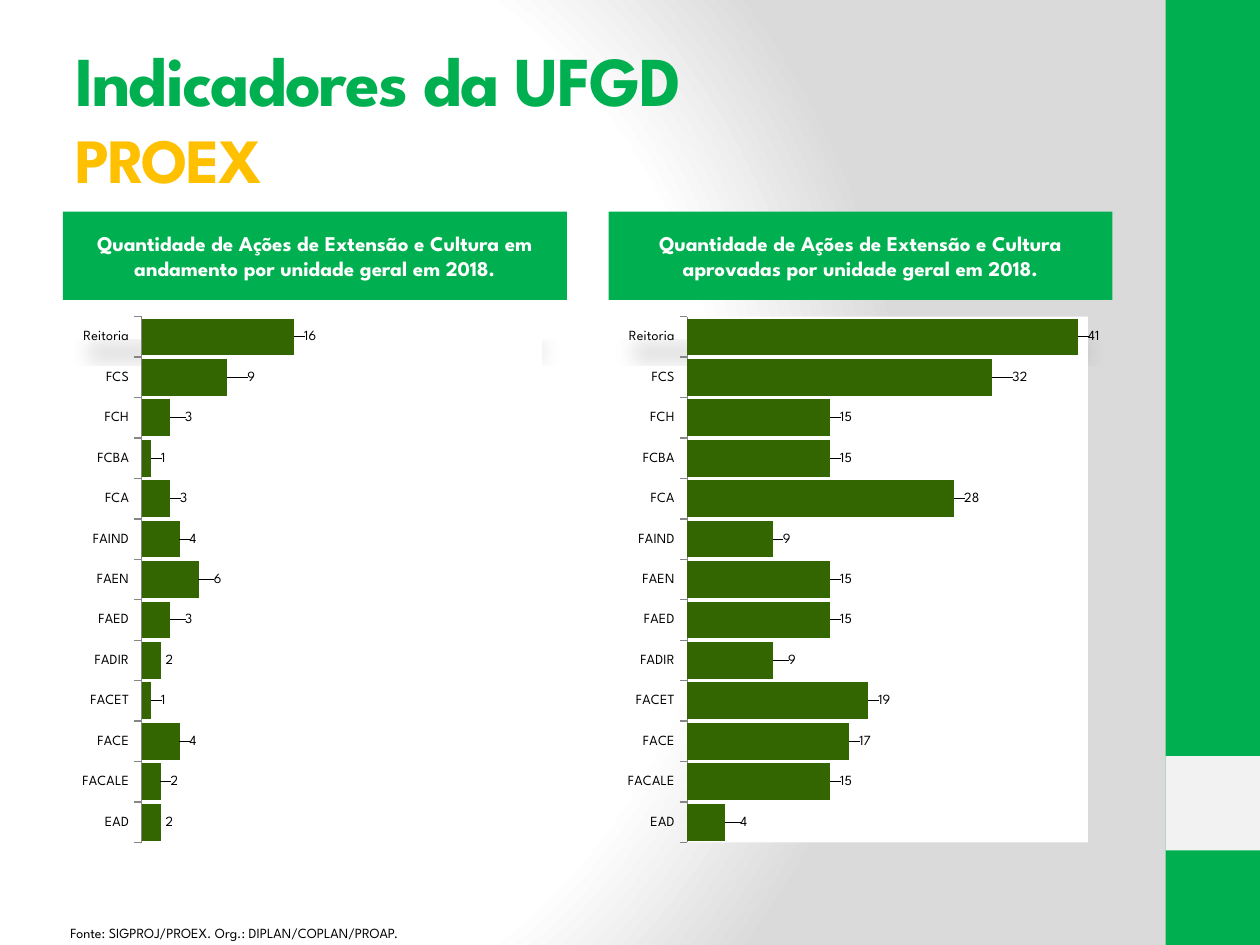
import pptx
import pptx.chart.data
import pptx.dml.color
import pptx.enum.chart
import pptx.enum.shapes
import pptx.enum.text
import pptx.oxml
import pptx.oxml.ns
import pptx.util
from pptx.util import Inches, Pt

RGBColor = pptx.dml.color.RGBColor
GREEN = RGBColor(0x00, 0xB0, 0x50)
AMBER = RGBColor(0xFF, 0xC0, 0x00)
BAR_GREEN = RGBColor(0x33, 0x66, 0x00)
PALE_GRAY = RGBColor(0xF2, 0xF2, 0xF2)
AXIS_GRAY = RGBColor(0x86, 0x86, 0x86)
WHITE = RGBColor(0xFF, 0xFF, 0xFF)
BLACK = RGBColor(0x00, 0x00, 0x00)

FONT = "League Spartan"
NSDECLS = pptx.oxml.ns.nsdecls

# Two-column grid, in inches
MARGIN, COLUMN_WIDTH, COLUMN_STEP = 0.5, 4, 4.33
HEADING_TOP, HEADING_HEIGHT = 1.68, 0.7
CHART_TOP, CHART_HEIGHT = HEADING_TOP + HEADING_HEIGHT, 4.32
BAND_LEFT, BAND_WIDTH = 9.25, 0.75

UNITS = ["EAD", "FACALE", "FACE", "FACET", "FADIR", "FAED", "FAEN",
         "FAIND", "FCA", "FCBA", "FCH", "FCS", "Reitoria"]
# Heading, values, and label shifts in hundredths of the chart width
PANELS = [
    ("Quantidade de Ações de Extensão e Cultura em andamento por unidade geral em 2018.",
     [2, 2, 4, 1, 2, 3, 6, 3 + 1, 3, 1, 3, 9, 16],
     [0, 1, 1, 1, 0, 2, 2, 1, 1, 1, 2, 3, 1]),
    ("Quantidade de Ações de Extensão e Cultura aprovadas por unidade geral em 2018.",
     [4, 15, 17, 19, 9, 15, 15, 9, 28, 15, 15, 32, 41],
     [2, 1, 1, 1, 2, 1, 1, 1, 1, 1, 1, 3, 1]),
]


def style_font(font, size, color, bold=False):
    font.name = FONT
    font.size = Pt(size)
    font.bold = bold
    font.color.rgb = color


def write_text(paragraph, text, size=8, color=BLACK, bold=False, spacing=None, align=None):
    run = paragraph.add_run()
    run.text = text
    style_font(run.font, size, color, bold)
    if spacing is not None:
        run.font._element.set("spc", str(spacing * 100))
    if align is not None:
        paragraph.alignment = align


def add_text_box(slide, left, top, width, height, anchor):
    frame = slide.shapes.add_textbox(
        Inches(left), Inches(top), Inches(width), Inches(height)).text_frame
    frame.word_wrap = True
    frame.vertical_anchor = anchor
    return frame


def add_block(slide, left, top, width, height, color):
    block = slide.shapes.add_shape(
        pptx.enum.shapes.MSO_SHAPE.RECTANGLE,
        Inches(left), Inches(top), Inches(width), Inches(height))
    block.shadow.inherit = False
    block.fill.solid()
    block.fill.fore_color.rgb = color
    block.line.fill.background()
    return block


def set_background(slide):
    fill = slide.background.fill
    fill.gradient()
    gradient = slide.element.xpath(".//p:bgPr/a:gradFill")[0]
    new_gradient = pptx.oxml.parse_xml(
        f'<a:gradFill {NSDECLS("a")} rotWithShape="1"><a:gsLst>'
        '<a:gs pos="0"><a:srgbClr val="FFFFFF"/></a:gs>'
        '<a:gs pos="75000"><a:srgbClr val="FFFFFF"/></a:gs>'
        '<a:gs pos="100000"><a:srgbClr val="DADADA"/></a:gs></a:gsLst>'
        '<a:path path="circle"><a:fillToRect l="20000" t="50000" r="100000" b="50000"/>'
        '</a:path></a:gradFill>')
    gradient.getparent().replace(gradient, new_gradient)


def add_heading(slide, left, text):
    heading = add_block(slide, left, HEADING_TOP, COLUMN_WIDTH, HEADING_HEIGHT, GREEN)
    # Flipped perspective shadow
    effects = heading.element.xpath("./p:spPr/a:effectLst")[0]
    effects.append(pptx.oxml.parse_xml(
        f'<a:outerShdw {NSDECLS("a")} blurRad="{Pt(12)}" dist="{Pt(25)}" dir="5400000" '
        'sx="90000" sy="-19000" rotWithShape="0"><a:srgbClr val="000000">'
        '<a:alpha val="15000"/></a:srgbClr></a:outerShdw>'))
    frame = heading.text_frame
    frame.word_wrap = True
    frame.vertical_anchor = pptx.enum.text.MSO_ANCHOR.MIDDLE
    write_text(frame.paragraphs[0], text, size=12, color=WHITE, bold=True,
               align=pptx.enum.text.PP_ALIGN.CENTER)


def format_plot_area(chart):
    plot_area = chart.element.xpath(".//c:plotArea")[0]
    for layout in plot_area.xpath("./c:layout"):
        plot_area.remove(layout)
    plot_area.insert(0, pptx.oxml.parse_xml(
        f'<c:layout {NSDECLS("c")}><c:manualLayout><c:layoutTarget val="inner"/>'
        '<c:xMode val="edge"/><c:yMode val="edge"/><c:x val="0.156"/><c:y val="0.031"/>'
        '<c:w val="0.795"/><c:h val="0.966"/></c:manualLayout></c:layout>'))
    plot_area.append(pptx.oxml.parse_xml(
        f'<c:spPr {NSDECLS("c", "a")}><a:solidFill><a:srgbClr val="FFFFFF"/>'
        '</a:solidFill><a:ln><a:noFill/></a:ln></c:spPr>'))


def format_labels(chart, series, shifts):
    outside_end = pptx.enum.chart.XL_LABEL_POSITION.OUTSIDE_END
    labels = series.data_labels
    labels.show_value = True
    labels.position = outside_end
    style_font(labels.font, 8, BLACK)
    for index, shift in enumerate(shifts):
        if not shift:
            continue
        label = series.points[index].data_label
        style_font(label.font, 8, BLACK)
        label.position = outside_end
        position = chart.element.xpath(f".//c:dLbl/c:idx[@val='{index}']")[0]
        position.addnext(pptx.oxml.parse_xml(
            f'<c:layout {NSDECLS("c")}><c:manualLayout><c:x val="{shift / 100}"/>'
            '<c:y val="0"/></c:manualLayout></c:layout>'))


def add_bar_chart(slide, left, values, shifts):
    actions = pptx.chart.data.CategoryChartData()
    actions.categories = UNITS
    actions.add_series("Series 1", values)
    chart = slide.shapes.add_chart(
        pptx.enum.chart.XL_CHART_TYPE.BAR_CLUSTERED, Inches(left), Inches(CHART_TOP),
        Inches(COLUMN_WIDTH), Inches(CHART_HEIGHT), actions).chart
    chart.has_legend = False
    chart.has_title = False
    style_font(chart.font, 8, BLACK)

    unit_axis, count_axis = chart.category_axis, chart.value_axis
    unit_axis.major_tick_mark = pptx.enum.chart.XL_TICK_MARK.OUTSIDE
    unit_axis.has_major_gridlines = False
    unit_axis.format.line.color.rgb = AXIS_GRAY
    style_font(unit_axis.tick_labels.font, 8, BLACK)
    count_axis.minimum_scale, count_axis.maximum_scale = 0, 42
    count_axis.has_major_gridlines = False
    count_axis.visible = False

    plot = chart.plots[0]
    plot.gap_width = 10
    plot.vary_by_categories = False
    series = plot.series[0]
    series.format.fill.solid()
    series.format.fill.fore_color.rgb = BAR_GREEN
    format_labels(chart, series, shifts)
    format_plot_area(chart)


def main():
    deck = pptx.Presentation()
    deck.slide_width, deck.slide_height = Inches(10), Inches(7.5)
    slide = deck.slides.add_slide(deck.slide_layouts[6])
    set_background(slide)

    # Side band
    add_block(slide, BAND_LEFT, 0, BAND_WIDTH, 7.5, GREEN)
    add_block(slide, BAND_LEFT, 6, BAND_WIDTH, BAND_WIDTH, PALE_GRAY)

    # Title
    title = add_text_box(slide, MARGIN, 0.3, 8.33, 1.25,
                         pptx.enum.text.MSO_ANCHOR.MIDDLE).paragraphs[0]
    write_text(title, "Indicadores da UFGD", size=40, color=GREEN, bold=True, spacing=-1)
    title.add_line_break()
    write_text(title, "PROEX", size=36, color=AMBER, bold=True, spacing=-1)

    # Heading and chart of each column
    for column, (heading, values, shifts) in enumerate(PANELS):
        left = MARGIN + column * COLUMN_STEP
        add_heading(slide, left, heading)
        add_bar_chart(slide, left, values, shifts)

    # Source line
    source = add_text_box(slide, 0.46, 7.29, 3.39, 0.23, pptx.enum.text.MSO_ANCHOR.TOP)
    write_text(source.paragraphs[0], "Fonte: SIGPROJ/PROEX. Org.: DIPLAN/COPLAN/PROAP.")

    deck.save("out.pptx")


if __name__ == "__main__":
    main()
